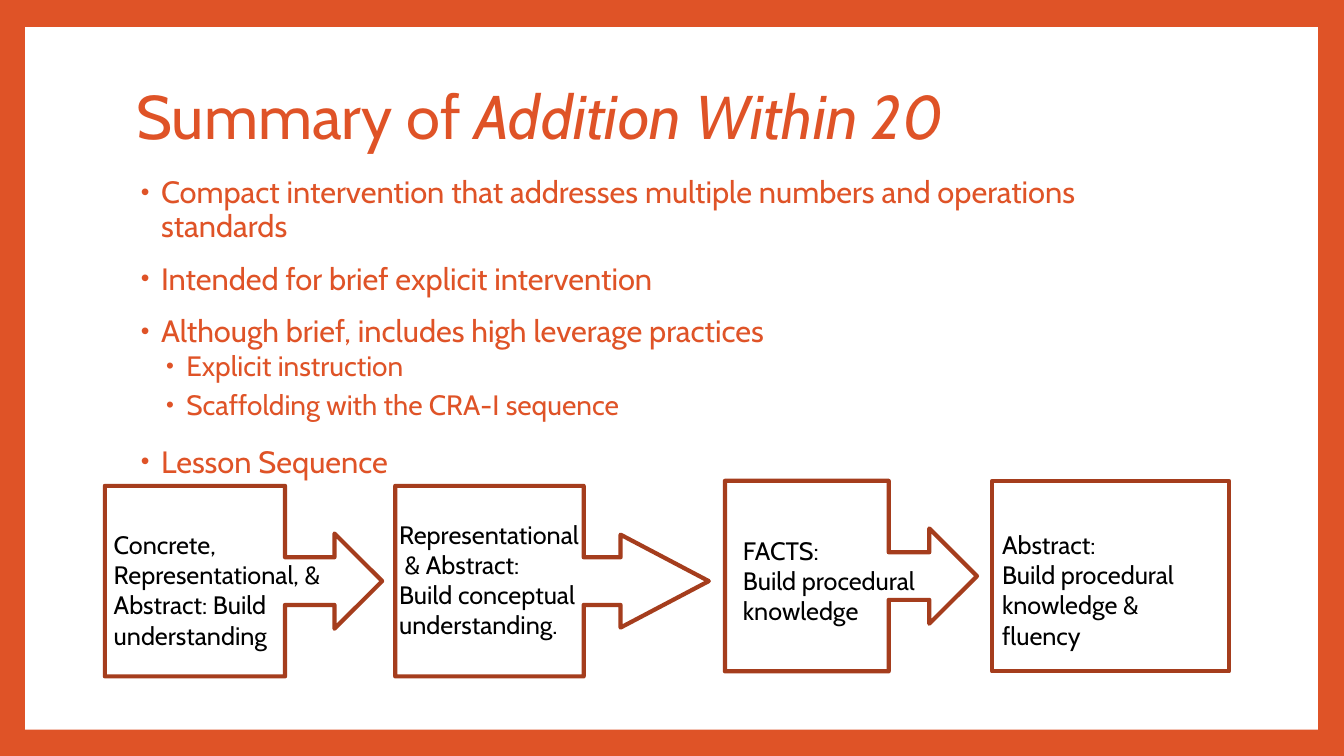
from pptx import Presentation
from pptx.dml.color import RGBColor
from pptx.enum import shapes, text
from pptx.oxml import parse_xml
from pptx.oxml.ns import nsdecls
from pptx.util import Inches, Pt

ORANGE = RGBColor(0xDF, 0x53, 0x27)
RUST = RGBColor(0xA5, 0x3D, 0x1D)
WHITE = RGBColor(255, 255, 255)
BLACK = RGBColor(0, 0, 0)
FONT = "Cabin"
ARROW = shapes.MSO_SHAPE.RIGHT_ARROW_CALLOUT
RECT = shapes.MSO_SHAPE.RECTANGLE

TITLE = [("Summary of ", False), ("Addition Within 20", True)]
POINTS = [
    (0, "Compact intervention that addresses multiple numbers and operations standards"),
    (0, "Intended for brief explicit intervention"),
    (0, "Although brief, includes high leverage practices"),
    (1, "Explicit instruction"),
    (1, "Scaffolding with the CRA-I sequence"),
    (0, "Lesson Sequence"),
]
LEVELS = [
    {"size": 22, "indent": 0.25, "before": 14, "after": 0},
    {"size": 20, "indent": 0.5, "before": 2, "after": 4},
]
STEPS = [
    (ARROW, (1.04, 4.82, 2.75, 1.89), (),
     (1.03, 5.2, 2.4, 1.31),
     "Concrete,\nRepresentational, &\nAbstract: Build\nunderstanding"),
    (ARROW, (3.92, 4.82, 3.11, 1.89), (0.25, 0.244, 0.463, 0.601),
     (3.86, 5.1, 2.09, 1.31),
     "Representational\n & Abstract:\nBuild conceptual\nunderstanding."),
    (ARROW, (7.19, 4.77, 2.5, 1.89), (),
     (7.27, 5.26, 1.98, 1.01),
     "FACTS:\nBuild procedural\nknowledge"),
    (RECT, (9.84, 4.77, 2.35, 1.89), (),
     (9.84, 5.2, 2.1, 1.31),
     "Abstract:\nBuild procedural\nknowledge & fluency"),
]


def style(run, size, color):
    run.font.name = FONT
    run.font.size = Pt(size)
    run.font.color.rgb = color


def add_box(slide, kind, place):
    box = slide.shapes.add_shape(kind, *map(Inches, place))
    box.shadow.inherit = False
    return box


def add_text(slide, place, words):
    frame = slide.shapes.add_textbox(*map(Inches, place)).text_frame
    frame.word_wrap = True
    frame.text = words
    return frame


def add_bullet(par, indent):
    props = par._p.get_or_add_pPr()
    props.set("marL", str(Inches(indent)))
    props.set("indent", str(Inches(-0.2)))
    for item in (
        f'<a:buClr {nsdecls("a")}><a:srgbClr val="{ORANGE}"/></a:buClr>',
        f'<a:buSzPct {nsdecls("a")} val="80000"/>',
        f'<a:buFont {nsdecls("a")} typeface="Arial"/>',
        f'<a:buChar {nsdecls("a")} char="•"/>',
    ):
        props.append(parse_xml(item))


def add_title(slide):
    title = slide.shapes.title
    title.left, title.top, title.width, title.height = map(
        Inches, (1.25, 0.67, 10.8, 1.04))
    frame = title.text_frame
    frame.vertical_anchor = text.MSO_ANCHOR.MIDDLE
    par = frame.paragraphs[0]
    par.alignment = text.PP_ALIGN.LEFT
    par.line_spacing = 0.9
    for words, slant in TITLE:
        run = par.add_run()
        run.text = words
        style(run, 44, ORANGE)
        run.font.italic = slant


def add_points(slide):
    words = "\n".join(point for _, point in POINTS)
    frame = add_text(slide, (1.25, 1.71, 10.75, 5.28), words)
    for par, (level, _) in zip(frame.paragraphs, POINTS):
        look = LEVELS[level]
        par.level = level
        par.line_spacing = 0.9
        par.space_before = Pt(look["before"])
        par.space_after = Pt(look["after"])
        add_bullet(par, look["indent"])
        style(par.runs[0], look["size"], ORANGE)


def add_steps(slide):
    for kind, place, adjust, spot, words in STEPS:
        for par in add_text(slide, spot, words).paragraphs:
            style(par.runs[0], 18, BLACK)
        box = add_box(slide, kind, place)
        box.fill.background()
        box.line.color.rgb = RUST
        box.line.width = Pt(3)
        for i, value in enumerate(adjust):
            box.adjustments[i] = value


def main():
    deck = Presentation()
    deck.slide_width, deck.slide_height = Inches(13.33), Inches(7.5)
    slide = deck.slides.add_slide(deck.slide_layouts[5])
    fill = slide.background.fill
    fill.solid()
    fill.fore_color.rgb = ORANGE
    panel = add_box(slide, RECT, (0.25, 0.27, 12.82, 6.97))
    panel.fill.solid()
    panel.fill.fore_color.rgb = WHITE
    panel.line.fill.background()
    tree = slide.shapes._spTree
    tree.remove(panel._element)
    tree.insert(2, panel._element)
    add_title(slide)
    add_points(slide)
    add_steps(slide)
    deck.save("out.pptx")


if __name__ == "__main__":
    main()
